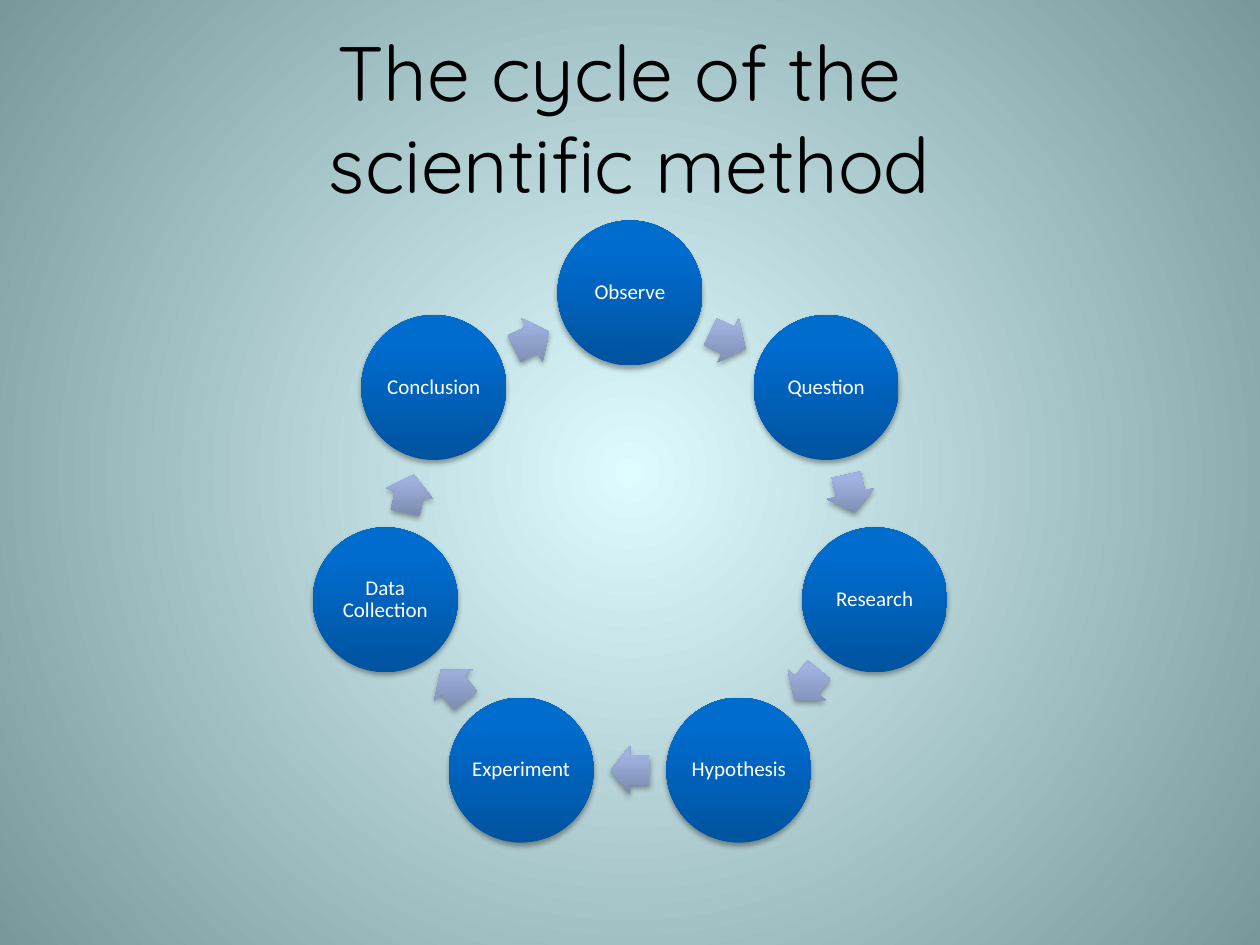
import math

import lxml.etree
import pptx
import pptx.dml.color
import pptx.enum.shapes
import pptx.enum.text
import pptx.oxml.ns
import pptx.util

RGB = pptx.dml.color.RGBColor
BLACK = RGB(0x00, 0x00, 0x00)
WHITE = RGB(0xFF, 0xFF, 0xFF)
BACKGROUND_STOPS = [(0, RGB(0xDE, 0xFB, 0xFF)), (100, RGB(0x79, 0x98, 0x9C))]
CIRCLE_STOPS = [(0, RGB(0x00, 0x53, 0x9F)), (80, RGB(0x00, 0x6C, 0xCE)), (100, RGB(0x00, 0x6D, 0xCF))]
ARROW_STOPS = [(0, RGB(0x7A, 0x89, 0xAC)), (80, RGB(0x9F, 0xB2, 0xE0)), (100, RGB(0x9E, 0xB2, 0xE2))]

SHAPE = pptx.enum.shapes.MSO_SHAPE
STEPS = ["Observe", "Question", "Research", "Hypothesis", "Experiment", "Data Collection", "Conclusion"]
CENTER_X, CENTER_Y, RADIUS = 630, 544, 251
CIRCLE_SIZE = (145, 145)
ARROW_SIZE = (39, 49)


def px(length):
    """Turn pixels into EMU."""
    return pptx.util.Emu(round(length * 914400 / 126))


def add_xml(parent, tag, **attributes):
    """Add a child element with the given attributes."""
    values = {name: str(value) for name, value in attributes.items()}
    return lxml.etree.SubElement(parent, pptx.oxml.ns.qn(tag), values)


def set_gradient(fill, owner, stops, radial=False):
    """Fill with a gradient that runs upward, or outward from the center."""
    fill.gradient()
    gradient = next(owner.iter(pptx.oxml.ns.qn("a:gradFill")))
    gradient.clear()
    gradient.set("rotWithShape", "0")
    stop_list = add_xml(gradient, "a:gsLst")
    for position, color in stops:
        stop = add_xml(stop_list, "a:gs", pos=position * 1000)
        add_xml(stop, "a:srgbClr", val=color)
    if radial:
        shade = add_xml(gradient, "a:path", path="circle")
        add_xml(shade, "a:fillToRect", l=50000, t=50000, r=50000, b=50000)
    else:
        add_xml(gradient, "a:lin", ang=270 * 60000, scaled=0)


def set_shadow(shape):
    """Give a shape a soft shadow below it."""
    shape.shadow.inherit = False
    effects = next(shape._element.iter(pptx.oxml.ns.qn("a:effectLst")))
    shadow = add_xml(effects, "a:outerShdw", blurRad=40000, dist=23000, dir=90 * 60000, rotWithShape=0)
    color = add_xml(shadow, "a:srgbClr", val=BLACK)
    add_xml(color, "a:alpha", val=35000)


def set_text(shape, text, font, size, color, margin, spacing=None):
    """Write centered text into a shape."""
    frame = shape.text_frame
    frame_format = {"word_wrap": True, "vertical_anchor": pptx.enum.text.MSO_ANCHOR.MIDDLE}
    for side in ("left", "right", "top", "bottom"):
        frame_format["margin_" + side] = px(margin)
    for name, value in frame_format.items():
        setattr(frame, name, value)
    para = frame.paragraphs[0]
    para.text = text
    para.alignment = pptx.enum.text.PP_ALIGN.CENTER
    para.line_spacing = spacing
    for span in para.runs:
        for name, value in {"name": font, "size": pptx.util.Pt(size)}.items():
            setattr(span.font, name, value)
        span.font.color.rgb = color


def add_title(page, text):
    """Add the slide heading."""
    box = page.shapes.add_textbox(px(63), px(38), px(1134), px(157))
    set_text(box, text, "Quicksand", 44, BLACK, 6)


def add_cycle_shape(group, kind, center, size, stops):
    """Add a shaded shape around a center point."""
    left, top = (middle - length / 2 for middle, length in zip(center, size))
    shape = group.shapes.add_shape(kind, px(left), px(top), px(size[0]), px(size[1]))
    set_gradient(shape.fill, shape._element, stops)
    shape.line.fill.background()
    set_shadow(shape)
    return shape


def add_step(group, text, center):
    """Add a labeled circle."""
    circle = add_cycle_shape(group, SHAPE.OVAL, center, CIRCLE_SIZE, CIRCLE_STOPS)
    set_text(circle, text, "Calibri", 12, WHITE, 2, 0.9)


def add_arrow(group, center, rotation):
    """Add a block arrow turned along the cycle."""
    arrow = add_cycle_shape(group, SHAPE.RIGHT_ARROW, center, ARROW_SIZE, ARROW_STOPS)
    arrow.adjustments[0] = 0.6
    arrow.adjustments[1] = 0.5
    arrow.rotation = rotation


def cycle_point(turn, radius):
    """Return the point at a clockwise share of a turn from the top."""
    angle = math.tau * turn
    return CENTER_X + radius * math.sin(angle), CENTER_Y - radius * math.cos(angle)


def add_cycle(page, steps):
    """Add steps on a ring with an arrow halfway to each next step."""
    group = page.shapes.add_group_shape()
    count = len(steps)
    arrow_radius = RADIUS * math.cos(math.pi / count)
    for index, text in enumerate(steps):
        halfway = (index + 0.5) / count
        add_step(group, text, cycle_point(index / count, RADIUS))
        add_arrow(group, cycle_point(halfway, arrow_radius), 360 * halfway)


def main():
    """Build and save the slide."""
    deck = pptx.Presentation()
    deck.slide_width, deck.slide_height = px(1260), px(945)
    page = deck.slides.add_slide(deck.slide_layouts[6])
    set_gradient(page.background.fill, page._element, BACKGROUND_STOPS, radial=True)
    add_title(page, "The cycle of the \vscientific method")
    add_cycle(page, STEPS)
    deck.save("out.pptx")


if __name__ == "__main__":
    main()
